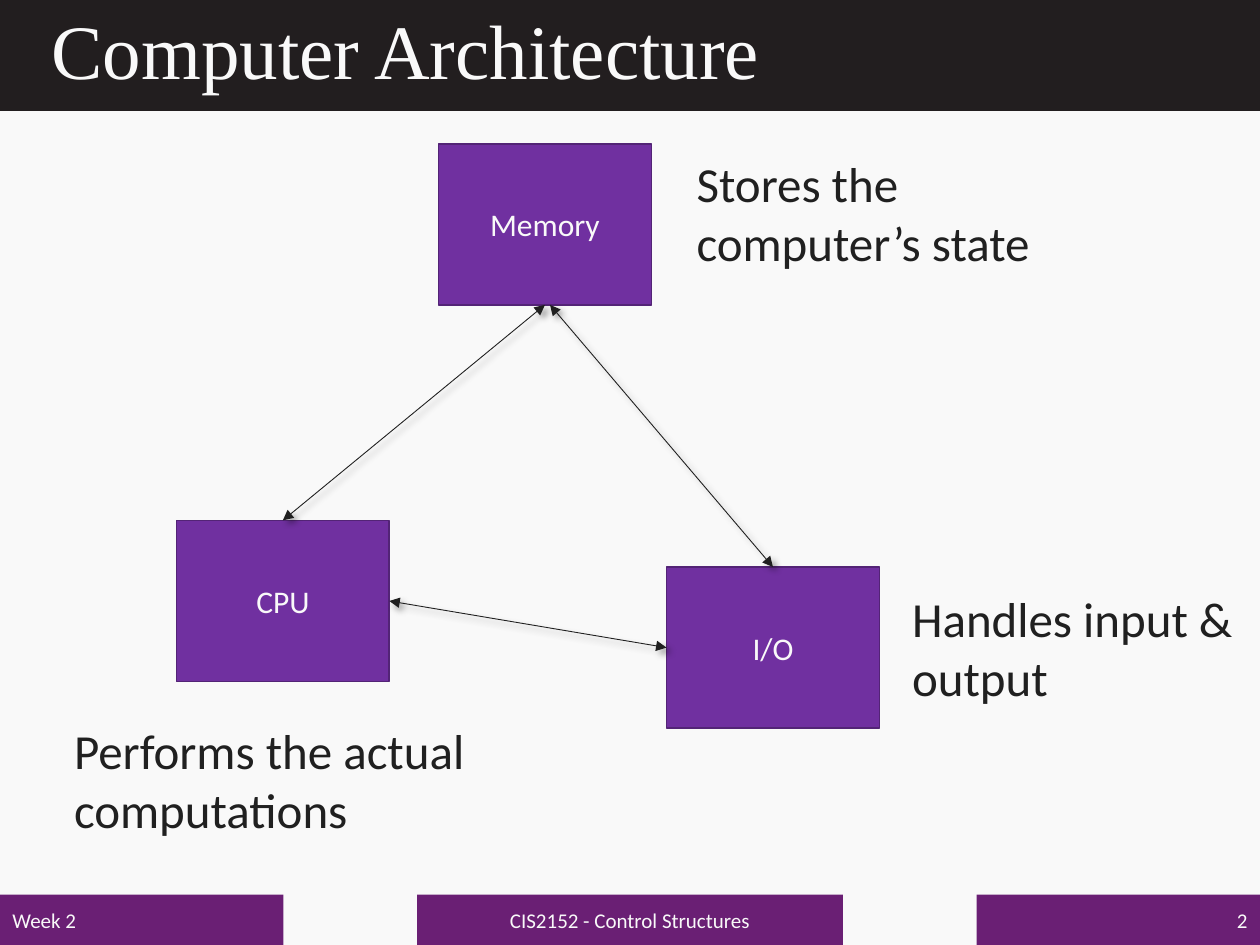
from dataclasses import dataclass

from lxml.etree import SubElement
from pptx import Presentation
from pptx.dml.color import RGBColor
from pptx.enum.shapes import MSO_CONNECTOR, MSO_SHAPE
from pptx.enum.text import MSO_ANCHOR as Anchor, MSO_AUTO_SIZE as AutoSize, PP_ALIGN as Align
from pptx.oxml.ns import qn
from pptx.util import Inches, Pt

# The slide is a grid of 100 columns by 75 rows
CELL = 0.1
COLS, ROWS = 100, 75
PAPER, INK, BLACK = "F9F9F9", "202020", "221E1F"
PLUM, PURPLE, EDGE = "6A1F74", "7030A0", "532476"
BOX_W, BOX_H = 16.9, 12.8
FOOTER_H = 4
TOP, LEFT, BOTTOM, RIGHT = range(4)


@dataclass
class Area:
    col: float
    row: float
    cols: float
    rows: float


@dataclass
class Unit:
    name: str
    col: float
    row: float
    role: str
    note: Area


@dataclass
class Link:
    start: str
    start_site: int
    end: str
    end_site: int
    offset: float = 0  # columns a bottom start stands clear of the middle


UNITS = [
    Unit("CPU", 14, 41.3, "Performs the actual computations", Area(4.9, 56.7, 35, 10.4)),
    Unit("Memory", 34.8, 11.4, "Stores the computer’s state", Area(54.3, 11.7, 30.8, 10.4)),
    Unit("I/O", 52.9, 45, "Handles input & output", Area(71.4, 46.2, 30.8, 10.4)),
]
LINKS = [
    Link("Memory", BOTTOM, "CPU", TOP),
    Link("Memory", BOTTOM, "I/O", TOP, 0.4),
    Link("CPU", RIGHT, "I/O", LEFT),
]
FOOTERS = [
    ("Week 2", 0, 22.5, Align.LEFT),
    ("CIS2152 - Control Structures", 33.1, 33.8, Align.CENTER),
    ("2", 77.5, 22.5, Align.RIGHT),
]


def color(value: str) -> RGBColor:
    return RGBColor.from_string(value)


def cells(count: float) -> int:
    return Inches(count * CELL)


def frame(area: Area) -> tuple:
    return tuple(map(cells, (area.col, area.row, area.cols, area.rows)))


def write(sp, text: str, size: float, ink: str = PAPER, align=Align.LEFT,
          anchor=Anchor.MIDDLE, font: str = "Calibri"):
    tf = sp.text_frame
    tf.word_wrap = True
    tf.vertical_anchor = anchor
    p = tf.paragraphs[0]
    p.text = text
    p.alignment = align
    p.font.name, p.font.size = font, Pt(size)
    p.font.color.rgb = color(ink)
    return p


def add_rect(s, area: Area, fill: str, edge: str = ""):
    sp = s.shapes.add_shape(MSO_SHAPE.RECTANGLE, *frame(area))
    sp.shadow.inherit = False
    sp.fill.solid()
    sp.fill.fore_color.rgb = color(fill)
    if edge:
        sp.line.color.rgb = color(edge)
        sp.line.width = Pt(1)
    else:
        sp.line.fill.background()
    return sp


def add_note(s, unit: Unit) -> None:
    sp = s.shapes.add_textbox(*frame(unit.note))
    write(sp, unit.role, 28, INK, anchor=Anchor.TOP)
    sp.text_frame.auto_size = AutoSize.SHAPE_TO_FIT_TEXT


def add_link(s, link: Link, boxes: dict) -> None:
    start = boxes[link.start]
    x = start.left + start.width // 2 + cells(link.offset)
    y = start.top + start.height
    line = s.shapes.add_connector(MSO_CONNECTOR.STRAIGHT, x, y, x, y)
    if not link.offset:
        line.begin_connect(start, link.start_site)
    line.end_connect(boxes[link.end], link.end_site)
    line.line.color.rgb = color(INK)
    line.line.width = Pt(0.5)
    # Arrowheads at both ends
    ln = line.line._get_or_add_ln()
    for end in ("a:headEnd", "a:tailEnd"):
        SubElement(ln, qn(end), type="triangle")
    # Soft shadow down to the right
    effects = SubElement(line._element.spPr, qn("a:effectLst"))
    shadow = SubElement(effects, qn("a:outerShdw"), blurRad=str(Pt(4)), dist=str(Pt(3)),
                        dir="2700000", algn="tl", rotWithShape="0")
    tone = SubElement(shadow, qn("a:srgbClr"), val="000000")
    SubElement(tone, qn("a:alpha"), val="40000")


def main() -> None:
    prs = Presentation()
    prs.slide_width, prs.slide_height = cells(COLS), cells(ROWS)
    s = prs.slides.add_slide(prs.slide_layouts[5])
    s.background.fill.solid()
    s.background.fill.fore_color.rgb = color(PAPER)

    # Header band behind the title
    band = add_rect(s, Area(0, 0, COLS, 8.8), BLACK)
    title = s.shapes.title
    title._element.addprevious(band._element)
    title.left, title.top, title.width, title.height = frame(Area(3.1, 0, 93.9, 8.6))
    p = write(title, "Computer Architecture", 44, font="Times New Roman")
    p.line_spacing = 0.9
    title.text_frame.auto_size = AutoSize.NONE

    # Footer bars
    for text, col, width, align in FOOTERS:
        bar = add_rect(s, Area(col, ROWS - FOOTER_H, width, FOOTER_H), PLUM)
        write(bar, text, 12, align=align)

    # Units, the links between them, and their roles
    boxes = {}
    for unit in UNITS:
        box = add_rect(s, Area(unit.col, unit.row, BOX_W, BOX_H), PURPLE, EDGE)
        write(box, unit.name, 18, align=Align.CENTER)
        boxes[unit.name] = box
    for link in LINKS:
        add_link(s, link, boxes)
    for unit in UNITS:
        add_note(s, unit)

    prs.save("out.pptx")


if __name__ == "__main__":
    main()
